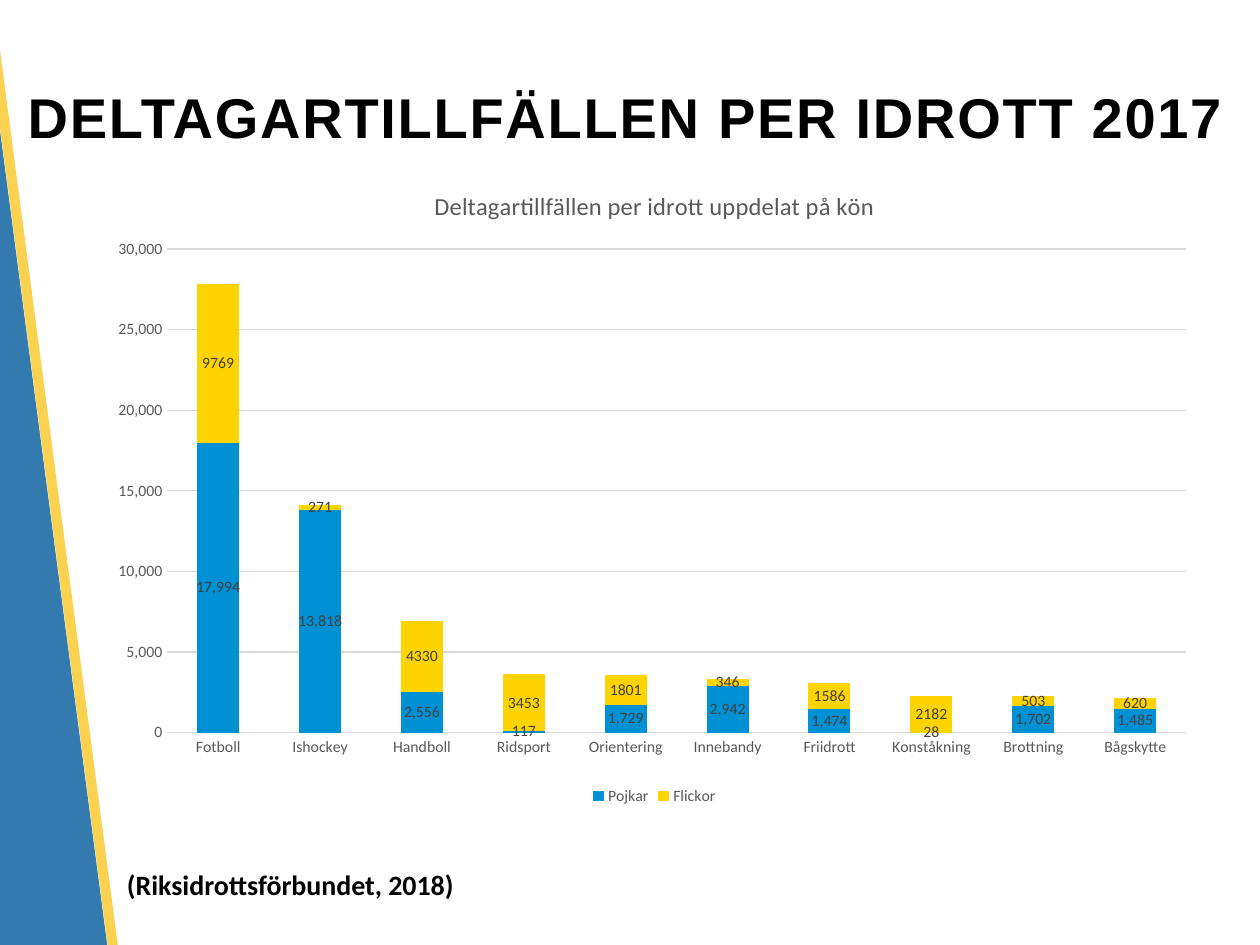
import pptx
import pptx.chart.data
import pptx.dml.color
import pptx.enum.chart
import pptx.enum.shapes
import pptx.enum.text
import pptx.oxml
import pptx.oxml.ns
import pptx.util
from pptx.util import Inches

COLOURS = {
    "black": "000000",
    "blue stripe": "005B9C",
    "yellow stripe": "FAC828",
    "boys": "0090D4",
    "girls": "FDD400",
    "grid": "D9D9D9",
    "axis text": "595959",
    "label text": "404040",
}

SPORTS = ["Fotboll", "Ishockey", "Handboll", "Ridsport", "Orientering",
          "Innebandy", "Friidrott", "Konståkning", "Brottning", "Bågskytte"]
# name, colour, label number format, values
SERIES = [
    ("Pojkar", "boys", "#,##0",
     [17994, 13818, 2556, 117, 1729, 2942, 1474, 28, 1702, 1485]),
    ("Flickor", "girls", "General",
     [9769, 271, 4330, 3453, 1801, 346, 1586, 2182, 503, 620]),
]


def colour(name):
    return pptx.dml.color.RGBColor.from_string(COLOURS[name])


def style_font(font, size, colour_name, face="Calibri", bold=False):
    font.size = pptx.util.Pt(size)
    font.name = face
    font.bold = bold
    font.color.rgb = colour(colour_name)


def style_line(line, colour_name):
    line.color.rgb = colour(colour_name)
    line.width = pptx.util.Pt(0.75)


def add_stripe(page, left, top, width, height, colour_name, opacity):
    """Add a slanted, partly transparent band at the left edge."""
    stripe = page.shapes.add_shape(
        pptx.enum.shapes.MSO_SHAPE.RECTANGLE,
        Inches(left), Inches(top), Inches(width), Inches(height))
    stripe.rotation = 352.5
    stripe.shadow.inherit = False
    stripe.line.fill.background()
    stripe.fill.solid()
    stripe.fill.fore_color.rgb = colour(colour_name)
    tint = stripe.fill._xPr.find(".//" + pptx.oxml.ns.qn("a:srgbClr"))
    alpha = tint.makeelement(pptx.oxml.ns.qn("a:alpha"), {"val": str(opacity * 1000)})
    tint.append(alpha)


def add_title(page, text):
    title = page.shapes.title
    title.left, title.top = Inches(0.12), Inches(0.3)
    title.width, title.height = Inches(9.88), Inches(1.25)
    frame = title.text_frame
    frame.word_wrap = True
    frame.auto_size = pptx.enum.text.MSO_AUTO_SIZE.NONE
    frame.vertical_anchor = pptx.enum.text.MSO_ANCHOR.MIDDLE
    para = frame.paragraphs[0]
    para.alignment = pptx.enum.text.PP_ALIGN.LEFT
    span = para.add_run()
    span.text = text
    style_font(span.font, 32, "black", "Arial", True)
    span.font._element.set("spc", "100")


def add_source(page, text):
    box = page.shapes.add_textbox(Inches(0.91), Inches(6.84), Inches(2.84), Inches(0.37))
    frame = box.text_frame
    frame.word_wrap = False
    frame.auto_size = pptx.enum.text.MSO_AUTO_SIZE.SHAPE_TO_FIT_TEXT
    span = frame.paragraphs[0].add_run()
    span.text = text
    style_font(span.font, 16, "black", bold=True)


def style_axes(chart):
    for axis in (chart.category_axis, chart.value_axis):
        axis.major_tick_mark = pptx.enum.chart.XL_TICK_MARK.NONE
        axis.minor_tick_mark = pptx.enum.chart.XL_TICK_MARK.NONE
        style_font(axis.tick_labels.font, 9, "axis text")
    style_line(chart.category_axis.format.line, "grid")
    values = chart.value_axis
    values.format.line.fill.background()
    values.has_major_gridlines = True
    style_line(values.major_gridlines.format.line, "grid")
    values.minimum_scale, values.maximum_scale = 0, 30000
    values.major_unit = 5000
    values.tick_labels.number_format = "#,##0"
    values.tick_labels.number_format_is_linked = False


def style_series(series, colour_name, number_format):
    series.format.fill.solid()
    series.format.fill.fore_color.rgb = colour(colour_name)
    style_line(series.format.line, colour_name)
    labels = series.data_labels
    labels.show_value = True
    labels.position = pptx.enum.chart.XL_LABEL_POSITION.CENTER
    labels.number_format = number_format
    labels.number_format_is_linked = False
    style_font(labels.font, 9, "label text")


def place_plot(chart, x, y, w, h):
    """Fix the inner plot area, in fractions of the chart."""
    area = chart._chartSpace.chart.plotArea
    for old in area.findall(pptx.oxml.ns.qn("c:layout")):
        area.remove(old)
    sizes = "".join(f'<c:{key} val="{value}"/>'
                    for key, value in (("x", x), ("y", y), ("w", w), ("h", h)))
    area.insert(0, pptx.oxml.parse_xml(
        f'<c:layout {pptx.oxml.ns.nsdecls("c")}><c:manualLayout>'
        '<c:layoutTarget val="inner"/><c:xMode val="edge"/><c:yMode val="edge"/>'
        f'{sizes}</c:manualLayout></c:layout>'))


def add_sports_chart(page):
    data = pptx.chart.data.CategoryChartData()
    data.categories = SPORTS
    for name, _, number_format, values in SERIES:
        data.add_series(name, values, number_format)
    chart = page.shapes.add_chart(
        pptx.enum.chart.XL_CHART_TYPE.COLUMN_STACKED,
        Inches(0.8), Inches(1.31), Inches(8.79), Inches(5.12), data).chart
    style_font(chart.font, 10, "black")

    chart.has_title = True
    span = chart.chart_title.text_frame.paragraphs[0].add_run()
    span.text = "Deltagartillfällen per idrott uppdelat på kön"
    style_font(span.font, 14, "axis text")

    chart.has_legend = True
    chart.legend.position = pptx.enum.chart.XL_LEGEND_POSITION.BOTTOM
    chart.legend.include_in_layout = False
    style_font(chart.legend.font, 9, "axis text")

    plot = chart.plots[0]
    plot.gap_width, plot.overlap = 150, 100
    plot.vary_by_categories = False
    style_axes(chart)
    for series, (_, colour_name, number_format, _) in zip(plot.series, SERIES):
        style_series(series, colour_name, number_format)
    place_plot(chart, 0.06, 0.13, 0.92, 0.75)


def main():
    deck = pptx.Presentation()
    deck.slide_width, deck.slide_height = Inches(10), Inches(7.5)
    page = deck.slides.add_slide(deck.slide_layouts[5])
    add_stripe(page, -0.52, -1.64, 0.91, 11.33, "blue stripe", 80)
    add_stripe(page, 0.38, -1.77, 0.08, 11.32, "yellow stripe", 81)
    add_title(page, "DELTAGARTILLFÄLLEN PER IDROTT 2017")
    add_sports_chart(page)
    add_source(page, "(Riksidrottsförbundet, 2018)")
    deck.save("out.pptx")


if __name__ == "__main__":
    main()
